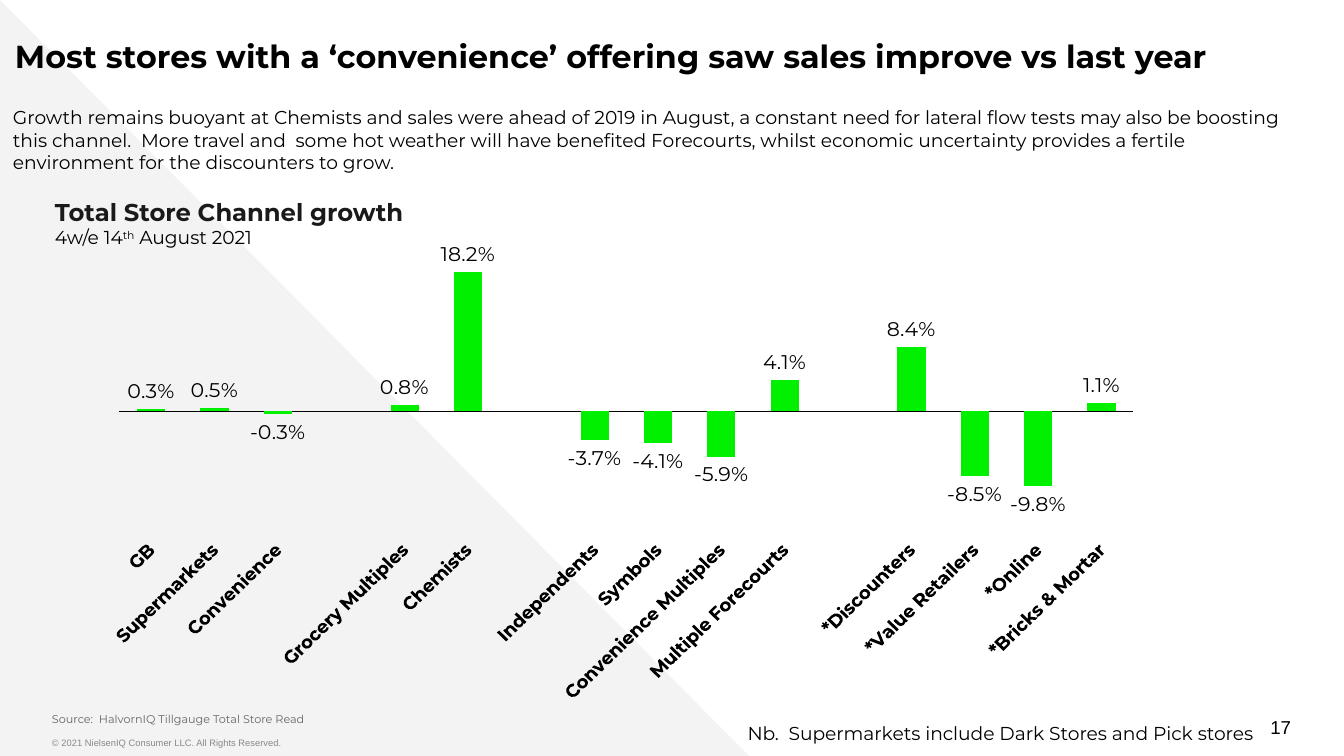
from dataclasses import dataclass

from lxml import etree
from pptx import Presentation
from pptx.chart.data import CategoryChartData
from pptx.dml.color import RGBColor
from pptx.enum.chart import XL_CHART_TYPE as ChartType
from pptx.enum.chart import XL_LABEL_POSITION as LabelPosition
from pptx.enum.chart import XL_TICK_LABEL_POSITION as TickLabels
from pptx.enum.chart import XL_TICK_MARK as TickMark
from pptx.enum.shapes import MSO_SHAPE as Preset
from pptx.enum.text import MSO_ANCHOR as Anchor
from pptx.enum.text import MSO_AUTO_SIZE as AutoSize
from pptx.enum.text import PP_ALIGN as Align
from pptx.oxml.ns import qn
from pptx.util import Pt

PX = 914400 / 134.4
SLIDE = (1344, 756)


@dataclass(frozen=True)
class Theme:
    font: str = "Montserrat"
    small_font: str = "Arial"
    ink: str = "000000"
    heading_ink: str = "1A1A1A"
    source_ink: str = "666666"
    legal_ink: str = "888888"
    wedge: str = "F3F3F3"
    bar: str = "00F000"
    title: int = 17
    heading: int = 13
    label: int = 11
    body: int = 10
    source: int = 6
    legal: int = 5


THEME = Theme()

TITLE = "Most stores with a ‘convenience’ offering saw sales improve vs last year"
INTRO = (
    "Growth remains buoyant at Chemists and sales were ahead of 2019 in August, "
    "a constant need for lateral flow tests may also be boosting this channel.  "
    "More travel and  some hot weather will have benefited Forecourts, whilst "
    "economic uncertainty provides a fertile environment for the discounters to grow."
)
HEADING = [
    ("Total Store Channel growth\v",
     {"size": THEME.heading, "color": THEME.heading_ink, "bold": True}),
    ("4w/e 14", {}),
    ("th", {"raised": True}),
    (" August 2021", {}),
]
SOURCE = "Source:  HalvornIQ Tillgauge Total Store Read"
COPYRIGHT = "© 2021 NielsenIQ Consumer LLC. All Rights Reserved."
NOTE = "Nb.  Supermarkets include Dark Stores and Pick stores"
PAGE = "17"

CHANNEL_GROUPS = [
    [("GB", 0.003), ("Supermarkets", 0.005), ("Convenience", -0.003)],
    [("Grocery Multiples", 0.008), ("Chemists", 0.182)],
    [("Independents", -0.037), ("Symbols", -0.041),
     ("Convenience Multiples", -0.059), ("Multiple Forecourts", 0.041)],
    [("*Discounters", 0.084), ("*Value Retailers", -0.085),
     ("*Online", -0.098), ("*Bricks & Mortar", 0.011)],
]
PLOT = {"x": 0.009, "y": 0.063, "w": 0.961, "h": 0.585}


def emu(*lengths):
    return [round(length * PX) for length in lengths]


def style(font, size=THEME.body, color=THEME.ink, bold=False, face=THEME.font):
    font.size, font.bold, font.name = Pt(size), bold, face
    font.color.rgb = RGBColor.from_string(color)


def write(holder, text, box, inset=(0, 7), align=Align.LEFT, anchor=Anchor.TOP,
          wrap=True, **look):
    holder.left, holder.top, holder.width, holder.height = emu(*box)
    frame = holder.text_frame
    frame.auto_size, frame.word_wrap = AutoSize.NONE, wrap
    frame.vertical_anchor = anchor
    frame.margin_left = frame.margin_right = emu(inset[0])[0]
    frame.margin_top = frame.margin_bottom = emu(inset[1])[0]
    paragraph = frame.paragraphs[0]
    paragraph.alignment = align
    for words, change in [(text, {})] if isinstance(text, str) else text:
        font_look = {**look, **change}
        raised = font_look.pop("raised", False)
        line, *broken = words.split("\v")
        run = paragraph.add_run()
        run.text = line
        style(run.font, **font_look)
        if raised:
            run.font._element.set("baseline", "30000")
        if broken:
            paragraph.add_line_break()


def add_wedge(slide):
    wedge = slide.shapes.add_shape(Preset.RIGHT_TRIANGLE, *emu(0, 0, 751, 758))
    wedge.shadow.inherit = False
    wedge.fill.solid()
    wedge.fill.fore_color.rgb = RGBColor.from_string(THEME.wedge)
    wedge.line.fill.background()
    slide.shapes._spTree.insert(2, wedge._element)


def place_plot(chart):
    area = chart._chartSpace.find(".//" + qn("c:plotArea"))
    for old in area.findall(qn("c:layout")):
        area.remove(old)
    layout = etree.Element(qn("c:layout"))
    manual = etree.SubElement(layout, qn("c:manualLayout"))
    settings = {"layoutTarget": "inner", "xMode": "edge", "yMode": "edge", **PLOT}
    for key, value in settings.items():
        etree.SubElement(manual, qn("c:" + key)).set("val", str(value))
    area.insert(0, layout)


def add_growth_chart(slide):
    channels = []
    for group in CHANNEL_GROUPS:
        channels += ([("", None)] if channels else []) + group
    data = CategoryChartData(number_format="0.0%")
    data.categories = [name for name, growth in channels]
    data.add_series("Series 1", [growth for name, growth in channels])
    chart = slide.shapes.add_chart(
        ChartType.COLUMN_CLUSTERED, *emu(110, 230, 1055, 473), data).chart
    chart.has_title = chart.has_legend = False
    style(chart.font, face=THEME.small_font)
    place_plot(chart)

    growth_axis = chart.value_axis
    growth_axis.visible = growth_axis.has_major_gridlines = False
    channel_axis = chart.category_axis
    channel_axis.tick_label_position = TickLabels.LOW
    channel_axis.major_tick_mark = channel_axis.minor_tick_mark = TickMark.NONE
    channel_axis.format.line.width = Pt(0.75)
    channel_axis.format.line.color.rgb = RGBColor.from_string(THEME.ink)
    style(channel_axis.tick_labels.font, bold=True)
    channel_axis._element.find(qn("c:txPr")).find(qn("a:bodyPr")).set("rot", "-2700000")

    plot = chart.plots[0]
    plot.gap_width, plot.vary_by_categories = 125, False
    bars = plot.series[0]
    bars.invert_if_negative = False
    bars.format.fill.solid()
    bars.format.fill.fore_color.rgb = RGBColor.from_string(THEME.bar)
    labels = bars.data_labels
    labels.show_value, labels.position = True, LabelPosition.OUTSIDE_END
    labels.number_format, labels.number_format_is_linked = "0.0%", False
    style(labels.font, size=THEME.label)


def main():
    deck = Presentation()
    deck.slide_width, deck.slide_height = emu(*SLIDE)
    slide = deck.slides.add_slide(deck.slide_layouts[5])

    def add_text(text, box, **look):
        write(slide.shapes.add_textbox(0, 0, 0, 0), text, box, **look)

    add_wedge(slide)
    write(slide.shapes.title, TITLE, (15, 24, 1322, 55), inset=(0, 13),
          size=THEME.title, bold=True)
    add_text(COPYRIGHT, (52, 730, 745, 27), size=THEME.legal,
             color=THEME.legal_ink, face=THEME.small_font)
    add_text(PAGE, (989, 707, 302, 40), align=Align.RIGHT, anchor=Anchor.MIDDLE,
             face=THEME.small_font)
    add_text(HEADING, (55, 190, 559, 66))
    add_text(SOURCE, (52, 712, 1199, 27), inset=(0, 13), anchor=Anchor.BOTTOM,
             size=THEME.source, color=THEME.source_ink)
    add_growth_chart(slide)
    add_text(NOTE, (720, 715, 546, 36), inset=(13, 7), align=Align.RIGHT, wrap=False)
    add_text(INTRO, (0, 99, 1322, 82), inset=(13, 7))
    deck.save("out.pptx")


if __name__ == "__main__":
    main()
